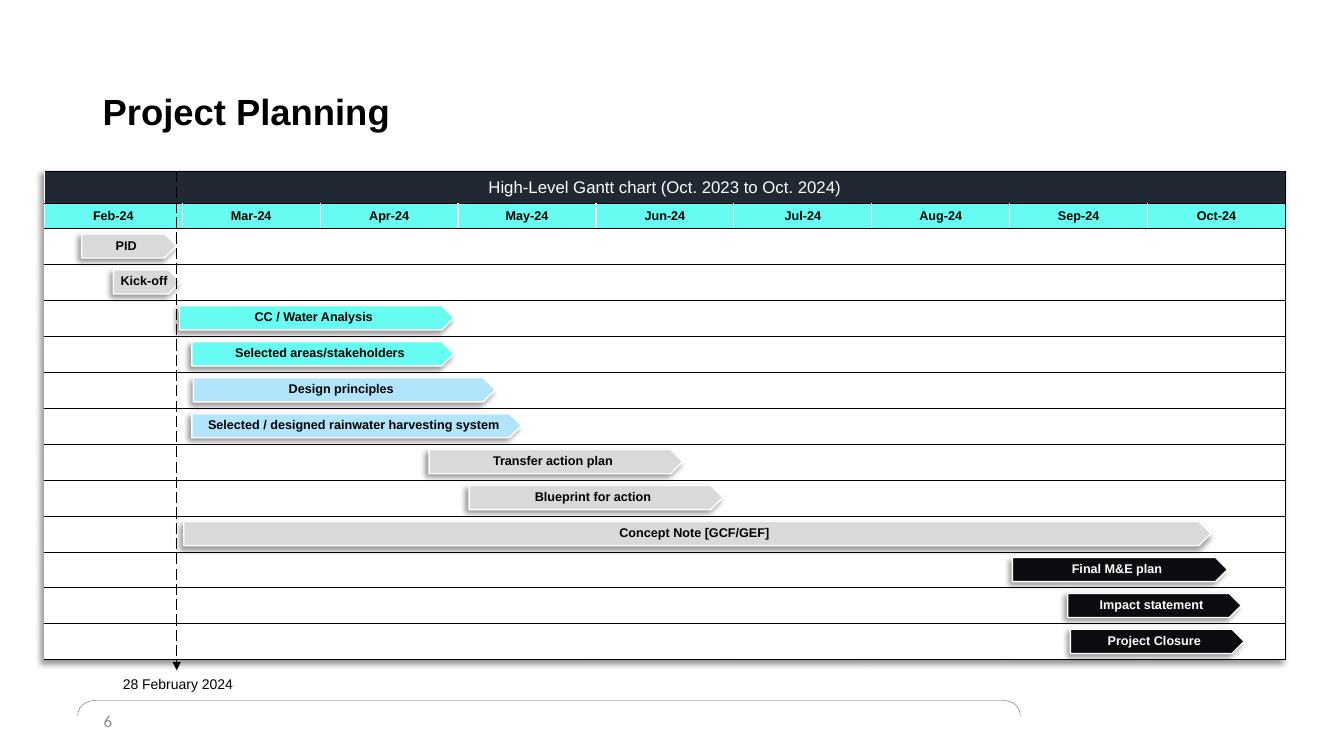
"""Build the project planning slide: a Gantt chart on a month grid."""
from lxml.etree import SubElement
from pptx import Presentation
from pptx.dml.color import RGBColor
from pptx.enum.dml import MSO_LINE
from pptx.enum.shapes import MSO_CONNECTOR, MSO_SHAPE
from pptx.enum.text import MSO_ANCHOR, PP_ALIGN
from pptx.oxml import parse_xml
from pptx.oxml.ns import nsdecls, qn
from pptx.util import Inches, Pt

TITLE = "Project Planning"
CHART_TITLE = "High-Level Gantt chart (Oct. 2023 to Oct. 2024)"
MONTHS = [f"{month}-24" for month in "Feb Mar Apr May Jun Jul Aug Sep Oct".split()]
TODAY = ("28 February 2024", 0.96)
PAGE = "6"
TASKS = [
    ("PID", 0.27, 0.69, "grey"),
    ("Kick-off", 0.50, 0.49, "grey"),
    ("CC / Water Analysis", 0.98, 1.99, "aqua"),
    ("Selected areas/stakeholders", 1.07, 1.90, "aqua"),
    ("Design principles", 1.08, 2.19, "sky"),
    ("Selected / designed rainwater harvesting system", 1.07, 2.39, "sky"),
    ("Transfer action plan", 2.79, 1.84, "grey"),
    ("Blueprint for action", 3.08, 1.84, "grey"),
    ("Concept Note [GCF/GEF]", 1.01, 7.45, "grey"),
    ("Final M&E plan", 7.02, 1.56, "ink"),
    ("Impact statement", 7.42, 1.26, "ink"),
    ("Project Closure", 7.44, 1.26, "ink"),
]
THEME = {
    "color": {"black": "000000", "white": "FFFFFF", "navy": "1F2833", "aqua": "66FCF1",
              "sky": "B2E4FC", "grey": "D9D9D9", "ink": "0B0C10", "page": "8C8C8C",
              "bracket": "595959"},
    "size": {"title": 26, "chart": 12, "label": 9, "date": 10, "page": 12},
}
LEFT, TOP, WIDTH, HEIGHT = 0.44, 1.7, 12.31, 4.85
TITLE_ROW, MONTH_ROW = 0.32, 0.25
MONTH_WIDTH = WIDTH / len(MONTHS)
TASK_TOP = TOP + TITLE_ROW + MONTH_ROW
TASK_ROW = (HEIGHT - TITLE_ROW - MONTH_ROW) / len(TASKS)
BAR_HEIGHT, BAR_GAP, PADDING = 0.24, 0.05, 0.04


def color(name):
    return RGBColor.from_string(THEME["color"][name])


def month_x(months):
    return LEFT + months * MONTH_WIDTH


def write(frame, text, size, ink="black", bold=False, align=PP_ALIGN.LEFT, face="Arial", spacing=None):
    paragraph = frame.paragraphs[0]
    paragraph.alignment = align
    paragraph.line_spacing = spacing
    run = paragraph.add_run()
    run.text = text
    for name, value in {"size": Pt(THEME["size"][size]), "bold": bold, "name": face}.items():
        setattr(run.font, name, value)
    run.font.color.rgb = color(ink)


def add_text(slide, box, text, size, anchor=MSO_ANCHOR.MIDDLE, **style):
    frame = slide.shapes.add_textbox(*map(Inches, box)).text_frame
    frame.word_wrap = True
    frame.vertical_anchor = anchor
    write(frame, text, size, **style)


def shadow_effect():
    return parse_xml(
        f'<a:effectLst {nsdecls("a")}><a:outerShdw blurRad="{Pt(4)}" dist="{Pt(3)}" '
        'dir="8100000" algn="tr" rotWithShape="0"><a:prstClr val="black">'
        '<a:alpha val="40000"/></a:prstClr></a:outerShdw></a:effectLst>')


def set_borders(cell, borders):
    properties = cell._tc.get_or_add_tcPr()
    for index, (side, (ink, width)) in enumerate(borders.items()):
        line = parse_xml(
            f'<a:{side} {nsdecls("a")} w="{Pt(width)}"><a:solidFill>'
            f'<a:srgbClr val="{THEME["color"][ink]}"/></a:solidFill></a:{side}>')
        properties.insert(index, line)


def add_grid(slide):
    heights = [TITLE_ROW, MONTH_ROW] + [TASK_ROW] * len(TASKS)
    box = map(Inches, (LEFT, TOP, WIDTH, HEIGHT))
    table = slide.shapes.add_table(len(heights), len(MONTHS), *box).table
    table.first_row = table.horz_banding = False
    table._tbl.tblPr.insert(0, shadow_effect())
    for column in table.columns:
        column.width = Inches(MONTH_WIDTH)
    for row, height in zip(table.rows, heights):
        row.height = Inches(height)
    table.cell(0, 0).merge(table.cell(0, len(MONTHS) - 1))

    for row_index, row in enumerate(table.rows):
        for column_index, cell in enumerate(row.cells):
            if cell.is_spanned:
                continue
            for side in ("left", "right", "top", "bottom"):
                setattr(cell, f"margin_{side}", Inches(PADDING / 2))
            cell.vertical_anchor = MSO_ANCHOR.MIDDLE
            cell.fill.solid()
            cell.fill.fore_color.rgb = color(("navy", "aqua", "white")[min(row_index, 2)])
            at_edge = row_index == 0 or column_index == len(MONTHS) - 1
            set_borders(cell, {
                "lnL": ("white", 1),
                "lnR": ("black" if at_edge else "white", 1),
                "lnT": ("black", (0.5, 1, 0.75)[min(row_index, 2)]),
                "lnB": ("black", 1 if row_index == 0 else 0.75),
            })
            if row_index == 0:
                write(cell.text_frame, CHART_TITLE, "chart", "white", align=PP_ALIGN.CENTER)
            elif row_index == 1:
                write(cell.text_frame, MONTHS[column_index], "label", bold=True,
                      align=PP_ALIGN.CENTER)


def add_bar(slide, row, label, start, length, fill):
    top = TASK_TOP + row * TASK_ROW + BAR_GAP
    box = map(Inches, (month_x(start), top, length * MONTH_WIDTH, BAR_HEIGHT))
    bar = slide.shapes.add_shape(MSO_SHAPE.PENTAGON, *box)
    bar.fill.solid()
    bar.fill.fore_color.rgb = color(fill)
    bar.line.color.rgb = color("white")
    bar.line.width = Pt(1)
    bar._element.spPr.append(shadow_effect())
    frame = bar.text_frame
    for side in ("left", "right", "top", "bottom"):
        setattr(frame, f"margin_{side}", Inches(PADDING))
    frame.word_wrap = True
    frame.vertical_anchor = MSO_ANCHOR.MIDDLE
    write(frame, label, "label", "white" if fill == "ink" else "black", True,
          PP_ALIGN.CENTER, spacing=0.9)


def add_today(slide):
    label, months = TODAY
    x, bottom = month_x(months), TOP + HEIGHT + 0.1
    ends = map(Inches, (x, TOP, x, bottom))
    marker = slide.shapes.add_connector(MSO_CONNECTOR.STRAIGHT, *ends)
    marker.line.color.rgb = color("black")
    marker.line.width = Pt(1)
    marker.line.dash_style = MSO_LINE.LONG_DASH
    SubElement(marker.line._get_or_add_ln(), qn("a:tailEnd"), type="triangle")
    SubElement(marker._element.spPr, qn("a:effectLst"))
    add_text(slide, (1.12, bottom, 1.53, 0.27), label, "date", MSO_ANCHOR.TOP)


def add_footer(slide):
    add_text(slide, (0.93, 6.95, 3, 0.4), PAGE, "page", ink="page", face="Calibri")
    box = map(Inches, (5.37, 2.35, 0.15, 9.35))
    bracket = slide.shapes.add_shape(MSO_SHAPE.LEFT_BRACKET, *box)
    bracket.rotation = 90
    bracket.adjustments[0] = 1.08
    bracket.shadow.inherit = False
    bracket.fill.background()
    bracket.line.color.rgb = color("bracket")
    bracket.line.width = Pt(0.25)


def main():
    presentation = Presentation()
    presentation.slide_width, presentation.slide_height = Inches(13.33), Inches(7.5)
    slide = presentation.slides.add_slide(presentation.slide_layouts[6])
    add_footer(slide)
    add_text(slide, (0.92, 0.4, 11.5, 1.45), TITLE, "title", bold=True, spacing=0.9)
    add_grid(slide)
    for row, task in enumerate(TASKS):
        add_bar(slide, row, *task)
    add_today(slide)
    presentation.save("out.pptx")


if __name__ == "__main__":
    main()
